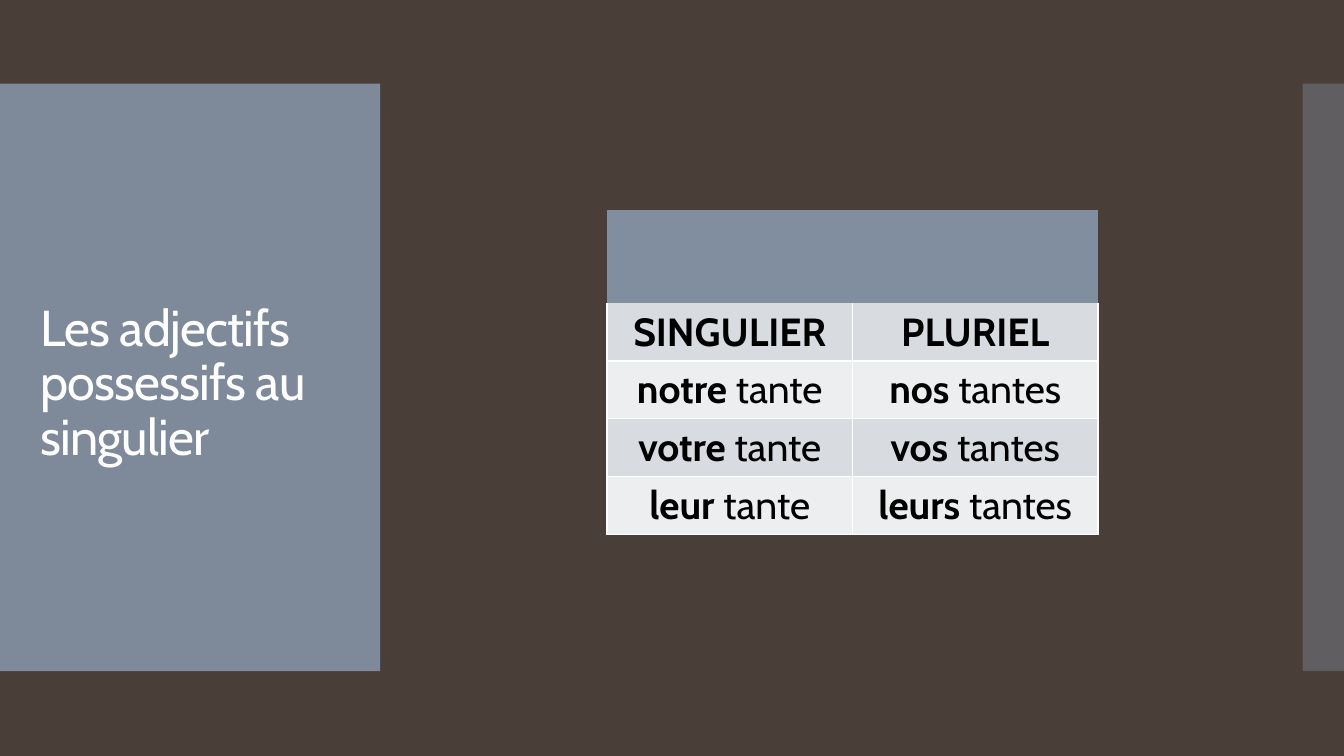
from dataclasses import dataclass

from lxml import etree
from pptx import Presentation
from pptx import util as u
from pptx.dml.color import RGBColor
from pptx.enum import shapes, text
from pptx.oxml.ns import qn


@dataclass(frozen=True)
class Theme:
    background: str = "4A3F38"
    accent: str = "818E9F"
    band_dark: str = "D8DBDF"
    band_light: str = "EDEEF0"
    white: str = "FFFFFF"
    black: str = "000000"
    font: str = "Cabin"
    title_size: int = 36
    table_size: int = 28
    border_width: int = 1


THEME = Theme()
TITLE = "Les adjectifs possessifs au singulier"
HEADINGS = ("SINGULIER", "PLURIEL")
# Each cell: possessive in bold, then the noun
POSSESSIVES = [
    (("notre ", "tante"), ("nos ", "tantes")),
    (("votre ", "tante"), ("vos ", "tantes")),
    (("leur ", "tante"), ("leurs ", "tantes")),
]


def fill_solid(fill, color):
    fill.solid()
    fill.fore_color.rgb = RGBColor.from_string(color)


def format_run(run, size, color, bold=False):
    run.font.name = THEME.font
    run.font.size = u.Pt(size)
    run.font.bold = bold
    run.font.color.rgb = RGBColor.from_string(color)


def add_panel(slide, left, width, opacity):
    """Add a translucent side panel."""
    panel = slide.shapes.add_shape(
        shapes.MSO_SHAPE.RECTANGLE,
        u.Inches(left), u.Inches(0.83), u.Inches(width), u.Inches(5.83))
    panel.shadow.inherit = False
    fill_solid(panel.fill, THEME.accent)
    panel.line.fill.background()
    color = panel.fill._xPr.find(qn("a:solidFill"))[0]
    etree.SubElement(color, qn("a:alpha"), val=str(opacity * 1000))


def set_title(slide):
    title = slide.shapes.title
    title.left, title.top = u.Inches(0.3), u.Inches(1.3)
    title.width, title.height = u.Inches(3.22), u.Inches(5.03)
    frame = title.text_frame
    frame.text = TITLE
    frame.word_wrap = True
    frame.auto_size = text.MSO_AUTO_SIZE.NONE
    frame.vertical_anchor = text.MSO_ANCHOR.MIDDLE
    paragraph = frame.paragraphs[0]
    paragraph.alignment = text.PP_ALIGN.LEFT
    paragraph.line_spacing = 0.9
    run = paragraph.runs[0]
    format_run(run, THEME.title_size, THEME.white)
    run.font._element.set("spc", "-60")
    # Bring the title in front of the panel
    slide.shapes._spTree.append(title._element)


def set_borders(cell, visible_sides):
    properties = cell._tc.get_or_add_tcPr()
    for index, side in enumerate("LRTB"):
        line = etree.Element(qn(f"a:ln{side}"))
        if side in visible_sides:
            line.set("w", str(u.Pt(THEME.border_width)))
            solid = etree.SubElement(line, qn("a:solidFill"))
            etree.SubElement(solid, qn("a:srgbClr"), val=THEME.white)
        else:
            etree.SubElement(line, qn("a:noFill"))
        properties.insert(index, line)


def fill_cell(cell, parts, color, borders):
    """Write a centred cell whose first part is bold."""
    fill_solid(cell.fill, color)
    set_borders(cell, borders)
    paragraph = cell.text_frame.paragraphs[0]
    paragraph.alignment = text.PP_ALIGN.CENTER
    for index, part in enumerate(parts):
        run = paragraph.add_run()
        run.text = part
        format_run(run, THEME.table_size, THEME.black, bold=index == 0)


def add_possessive_table(slide):
    rows = [tuple((heading,) for heading in HEADINGS), *POSSESSIVES]
    table = slide.shapes.add_table(
        len(rows) + 1, 2, u.Inches(6.02), u.Inches(2.08),
        u.Inches(4.87), u.Inches(3.21)).table
    table.first_row = table.horz_banding = False
    for row in table.rows:
        row.height = u.Inches(0.57)
    table.rows[0].height = u.Inches(0.93)

    # Empty banner across both columns
    for cell in table.rows[0].cells:
        fill_solid(cell.fill, THEME.accent)
        set_borders(cell, "")
    table.cell(0, 0).merge(table.cell(0, 1))

    # Headings and possessives in alternating bands
    for row_index, row in enumerate(rows, start=1):
        color = THEME.band_dark if row_index % 2 else THEME.band_light
        borders = "LRB" if row_index == 1 else "LRTB"
        for column_index, parts in enumerate(row):
            fill_cell(table.cell(row_index, column_index), parts, color, borders)


def main():
    presentation = Presentation()
    presentation.slide_width = u.Inches(13.33)
    presentation.slide_height = u.Inches(7.5)
    slide = presentation.slides.add_slide(presentation.slide_layouts[5])
    fill_solid(slide.background.fill, THEME.background)

    # Side panels
    add_panel(slide, 0, 3.77, 95)
    add_panel(slide, 12.92, 0.41, 40)

    # Content
    add_possessive_table(slide)
    set_title(slide)
    presentation.save("out.pptx")


if __name__ == "__main__":
    main()
